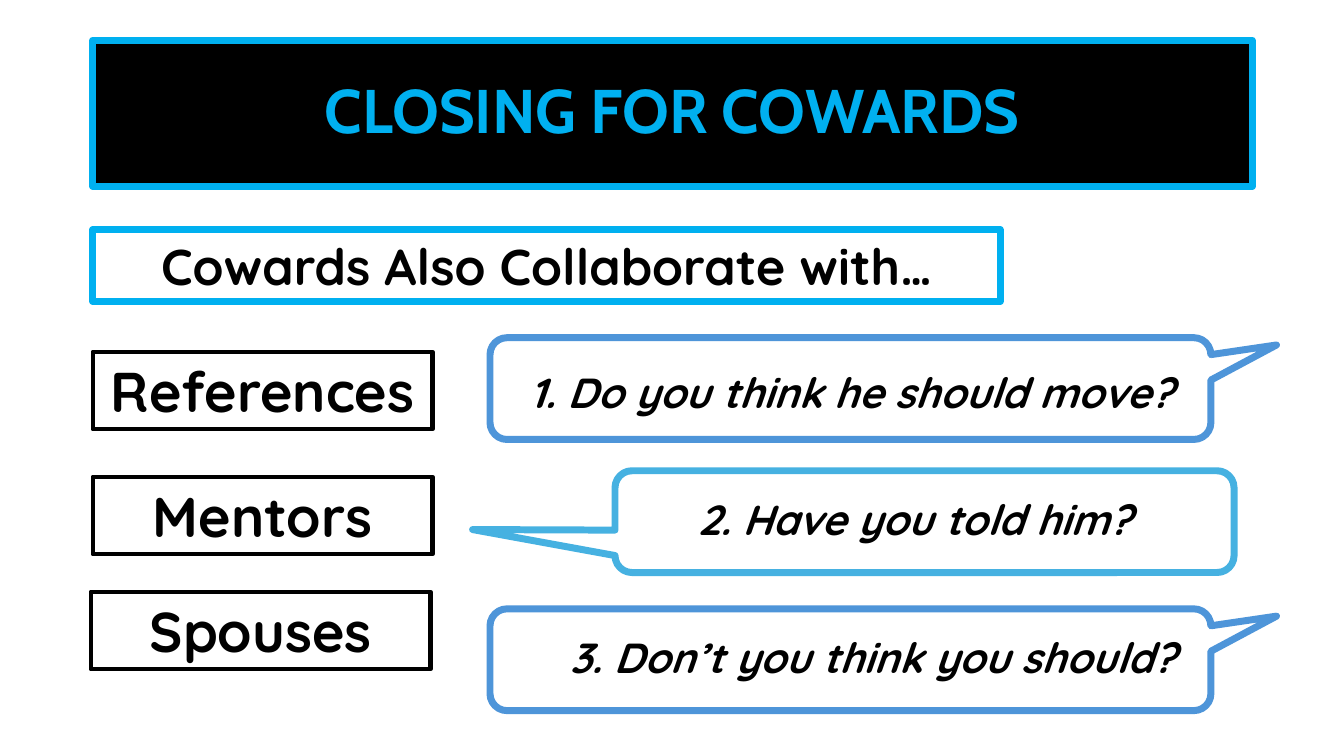
"""Build the "Closing for Cowards" slide with labelled roles and speech callouts."""
from typing import NamedTuple

from pptx import Presentation
from pptx.dml.color import RGBColor
from pptx.enum.shapes import MSO_SHAPE
from pptx.enum.text import MSO_ANCHOR, PP_ALIGN
from pptx.shapes.autoshape import Shape
from pptx.slide import Slide
from pptx.util import Inches, Pt

BLACK = RGBColor(0x00, 0x00, 0x00)
CYAN = RGBColor(0x00, 0xB0, 0xF0)
BLUE = RGBColor(0x4E, 0x95, 0xD9)
SKY = RGBColor(0x46, 0xB1, 0xE1)


class Area(NamedTuple):
    left: float
    top: float
    width: float
    height: float


class Label(NamedTuple):
    text: str
    area: Area
    size: int
    color: RGBColor
    weight: float


class Question(NamedTuple):
    text: str
    text_area: Area
    bubble_area: Area
    color: RGBColor
    tail: tuple[float, float]


RIGHT_TAIL = (0.591, -0.428)
LEFT_TAIL = (-0.73, 0.078)

LABELS = [
    Label("Cowards Also Collaborate with…", Area(0.92, 2.28, 9, 0.71), 36, CYAN, 5),
    Label("References", Area(0.92, 3.49, 3.37, 0.77), 40, BLACK, 3),
    Label("Mentors", Area(0.92, 4.73, 3.37, 0.77), 40, BLACK, 3),
    Label("Spouses", Area(0.9, 5.87, 3.37, 0.77), 40, BLACK, 3),
]

QUESTIONS = [
    Question("1. Do you think he should move?", Area(4.86, 3.59, 7.17, 0.61),
             Area(4.86, 3.35, 7.15, 1.01), BLUE, RIGHT_TAIL),
    Question("2. Have you told him?", Area(6.3, 4.85, 5.54, 0.61),
             Area(6.1, 4.67, 6.14, 1.01), SKY, LEFT_TAIL),
    Question("3. Don’t you think you should?", Area(5.07, 6.22, 7.17, 0.61),
             Area(4.86, 6.04, 7.15, 1.01), BLUE, RIGHT_TAIL),
]


def inches(area: Area) -> list[Inches]:
    return [Inches(value) for value in area]


def write(box: Shape, text: str, *, size: int, font: str = "Quicksand",
          color: RGBColor = BLACK, italic: bool = False,
          anchor: MSO_ANCHOR = MSO_ANCHOR.TOP) -> None:
    frame = box.text_frame
    frame.word_wrap = True
    frame.vertical_anchor = anchor
    para = frame.paragraphs[0]
    para.alignment = PP_ALIGN.CENTER
    span = para.add_run()
    span.text = text
    span.font.name = font
    span.font.size = Pt(size)
    span.font.bold = True
    span.font.italic = italic
    span.font.color.rgb = color


def outline(box: Shape, color: RGBColor, weight: float) -> None:
    box.line.color.rgb = color
    box.line.width = Pt(weight)


def add_outlined(page: Slide, kind: MSO_SHAPE, area: Area,
                 color: RGBColor, weight: float) -> Shape:
    box = page.shapes.add_shape(kind, *inches(area))
    box.shadow.inherit = False
    box.fill.background()
    outline(box, color, weight)
    return box


def add_title(page: Slide, text: str, area: Area) -> None:
    title = page.shapes.title
    title.left, title.top, title.width, title.height = inches(area)
    title.fill.solid()
    title.fill.fore_color.rgb = BLACK
    outline(title, CYAN, 5)
    write(title, text, size=44, font="Cabin", color=CYAN, anchor=MSO_ANCHOR.MIDDLE)
    title.text_frame.paragraphs[0].line_spacing = 0.9


def add_label(page: Slide, label: Label) -> None:
    box = add_outlined(page, MSO_SHAPE.RECTANGLE, label.area, label.color, label.weight)
    write(box, label.text, size=label.size)


def add_question(page: Slide, question: Question) -> None:
    bubble = add_outlined(page, MSO_SHAPE.ROUNDED_RECTANGULAR_CALLOUT,
                          question.bubble_area, question.color, 5)
    for index, value in enumerate((*question.tail, 0.167)):
        bubble.adjustments[index] = value
    box = page.shapes.add_textbox(*inches(question.text_area))
    write(box, question.text, size=30, italic=True)


def main() -> None:
    deck = Presentation()
    deck.slide_width, deck.slide_height = Inches(13.33), Inches(7.5)
    page = deck.slides.add_slide(deck.slide_layouts.get_by_name("Title Only"))
    add_title(page, "CLOSING FOR COWARDS", Area(0.92, 0.4, 11.5, 1.45))
    for label in LABELS:
        add_label(page, label)
    for question in QUESTIONS:
        add_question(page, question)
    deck.save("out.pptx")


if __name__ == "__main__":
    main()
